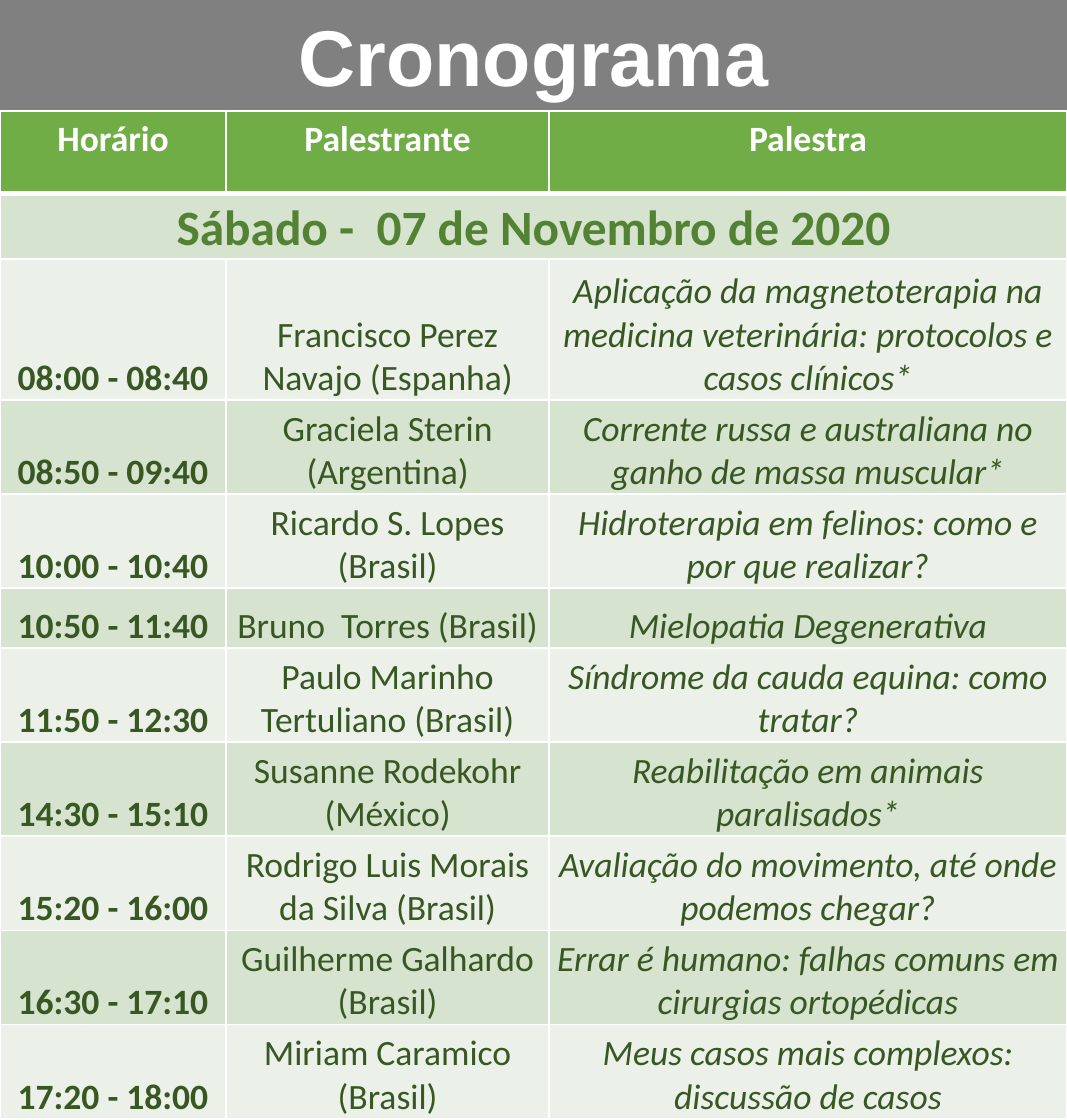
"""Builds the one-slide conference schedule."""
import dataclasses

import lxml.etree
import pptx
import pptx.dml.color
import pptx.enum.text
import pptx.oxml.ns
import pptx.util

Pt = pptx.util.Pt
ANCHOR = pptx.enum.text.MSO_ANCHOR
CENTER = pptx.enum.text.PP_ALIGN.CENTER


@dataclasses.dataclass(frozen=True)
class Theme:
    """Colours, fonts and type sizes of the schedule."""
    white: str = "FFFFFF"
    banner: str = "808080"
    header: str = "70AD47"
    bands: tuple = ("D5E3CF", "EBF1E9")
    day_text: str = "548235"
    body_text: str = "385723"
    title_font: str = "Arial"
    table_font: str = "Calibri"
    title_size: int = 40
    day_size: int = 25
    body_size: int = 18
    thin: int = 1
    thick: int = 3


def rgb(value):
    """Turn a hex string into a colour."""
    return pptx.dml.color.RGBColor.from_string(value)


def apply(target, values):
    """Set every attribute named in a dict."""
    for name, value in values.items():
        setattr(target, name, value)


class ScheduleSlide:
    """Holds the theme and the current slide, and adds its elements."""

    def __init__(self, deck, theme):
        """Add a title-only slide to the deck."""
        self.theme = theme
        self.slide = deck.slides.add_slide(deck.slide_layouts[5])

    def label(self, frame, text, color, **font):
        """Set one centred line of formatted text."""
        paragraph = frame.paragraphs[0]
        paragraph.alignment = CENTER
        run = paragraph.add_run()
        run.text = text
        apply(run.font, font)
        run.font.color.rgb = rgb(color)

    def title(self, text, width, height):
        """Place the title placeholder as a filled banner."""
        banner = self.slide.shapes.title
        apply(banner, {"left": 0, "top": 0, "width": width, "height": height})
        banner.fill.solid()
        banner.fill.fore_color.rgb = rgb(self.theme.banner)
        apply(banner.text_frame, {
            "word_wrap": True,
            "auto_size": pptx.enum.text.MSO_AUTO_SIZE.NONE,
            "vertical_anchor": ANCHOR.MIDDLE,
        })
        self.label(banner.text_frame, text, self.theme.white, bold=True,
                   name=self.theme.title_font, size=Pt(self.theme.title_size))

    def table(self, top, widths, heights):
        """Add an empty table with the given column widths and row heights."""
        grid = self.slide.shapes.add_table(
            len(heights), len(widths), 0, Pt(top),
            Pt(sum(widths)), Pt(sum(heights))).table
        for column, width in zip(grid.columns, widths):
            column.width = Pt(width)
        for row, height in zip(grid.rows, heights):
            row.height = Pt(height)
        return grid

    def borders(self, cell, top, bottom):
        """Draw the white borders of a cell."""
        properties = cell._tc.get_or_add_tcPr()
        thin = self.theme.thin
        for side, width in zip("LRTB", (thin, thin, top, bottom)):
            line = lxml.etree.SubElement(
                properties, pptx.oxml.ns.qn(f"a:ln{side}"), w=str(Pt(width)))
            fill = lxml.etree.SubElement(line, pptx.oxml.ns.qn("a:solidFill"))
            lxml.etree.SubElement(
                fill, pptx.oxml.ns.qn("a:srgbClr"), val=self.theme.white)

    def cell(self, cell, fill, top, bottom):
        """Give a cell its borders and fill."""
        self.borders(cell, top, bottom)
        cell.fill.solid()
        cell.fill.fore_color.rgb = rgb(fill)

    def schedule(self, grid, headings, day, talks):
        """Fill the table with headings, the day and its talks."""
        theme = self.theme
        tight = {"margin_left": Pt(0.72), "margin_right": Pt(0.72),
                 "margin_top": Pt(0.72), "margin_bottom": 0,
                 "vertical_anchor": ANCHOR.BOTTOM}
        body = {"name": theme.table_font, "size": Pt(theme.body_size)}
        column_fonts = ({"bold": True, "italic": False},
                        {"bold": False, "italic": False},
                        {"bold": False, "italic": True})
        for column, heading in enumerate(headings):
            cell = grid.cell(0, column)
            self.cell(cell, theme.header, theme.thin, theme.thick)
            self.label(cell.text_frame, heading, theme.white, bold=True, **body)
            day_cell = grid.cell(1, column)
            self.cell(day_cell, theme.bands[0], theme.thick, theme.thin)
            apply(day_cell, tight)
        grid.cell(1, 0).merge(grid.cell(1, len(headings) - 1))
        self.label(grid.cell(1, 0).text_frame, day, theme.day_text, bold=True,
                   name=theme.table_font, size=Pt(theme.day_size))
        for row, talk in enumerate(talks, start=2):
            for column, (text, font) in enumerate(zip(talk, column_fonts)):
                cell = grid.cell(row, column)
                self.cell(cell, theme.bands[(row - 1) % 2],
                          theme.thin, theme.thin)
                apply(cell, tight)
                self.label(cell.text_frame, text, theme.body_text,
                           **body, **font)


HEADINGS = ("Horário", "Palestrante", "Palestra")
DAY = "Sábado -  07 de Novembro de 2020"
TALKS = (
    ("08:00 - 08:40", "Francisco Perez Navajo (Espanha)",
     "Aplicação da magnetoterapia na medicina veterinária: "
     "protocolos e casos clínicos*"),
    ("08:50 - 09:40", "Graciela Sterin (Argentina)",
     "Corrente russa e australiana no ganho de massa muscular*"),
    ("10:00 - 10:40", "Ricardo S. Lopes (Brasil)",
     "Hidroterapia em felinos: como e por que realizar?"),
    ("10:50 - 11:40", "Bruno  Torres (Brasil)", "Mielopatia Degenerativa"),
    ("11:50 - 12:30", "Paulo Marinho Tertuliano (Brasil)",
     "Síndrome da cauda equina: como tratar?"),
    ("14:30 - 15:10", "Susanne Rodekohr (México)",
     "Reabilitação em animais paralisados*"),
    ("15:20 - 16:00", "Rodrigo Luis Morais da Silva (Brasil)",
     "Avaliação do movimento, até onde podemos chegar?"),
    ("16:30 - 17:10", "Guilherme Galhardo (Brasil)",
     "Errar é humano: falhas comuns em cirurgias ortopédicas"),
    ("17:20 - 18:00", "Miriam Caramico (Brasil)",
     "Meus casos mais complexos: discussão de casos"),
)
COLUMN_WIDTHS = (114.5, 163.4, 262.1)
ROW_HEIGHTS = (41.8, 33.3, 71.3, *[47.6] * 2, 30.4, *[47.6] * 5)


def main():
    """Build and save the schedule."""
    deck = pptx.Presentation()
    apply(deck, {"slide_width": Pt(540), "slide_height": Pt(566.64)})
    page = ScheduleSlide(deck, Theme())
    page.title("Cronograma", deck.slide_width, Pt(55.6))
    grid = page.table(56, COLUMN_WIDTHS, ROW_HEIGHTS)
    page.schedule(grid, HEADINGS, DAY, TALKS)
    deck.save("out.pptx")


if __name__ == "__main__":
    main()
